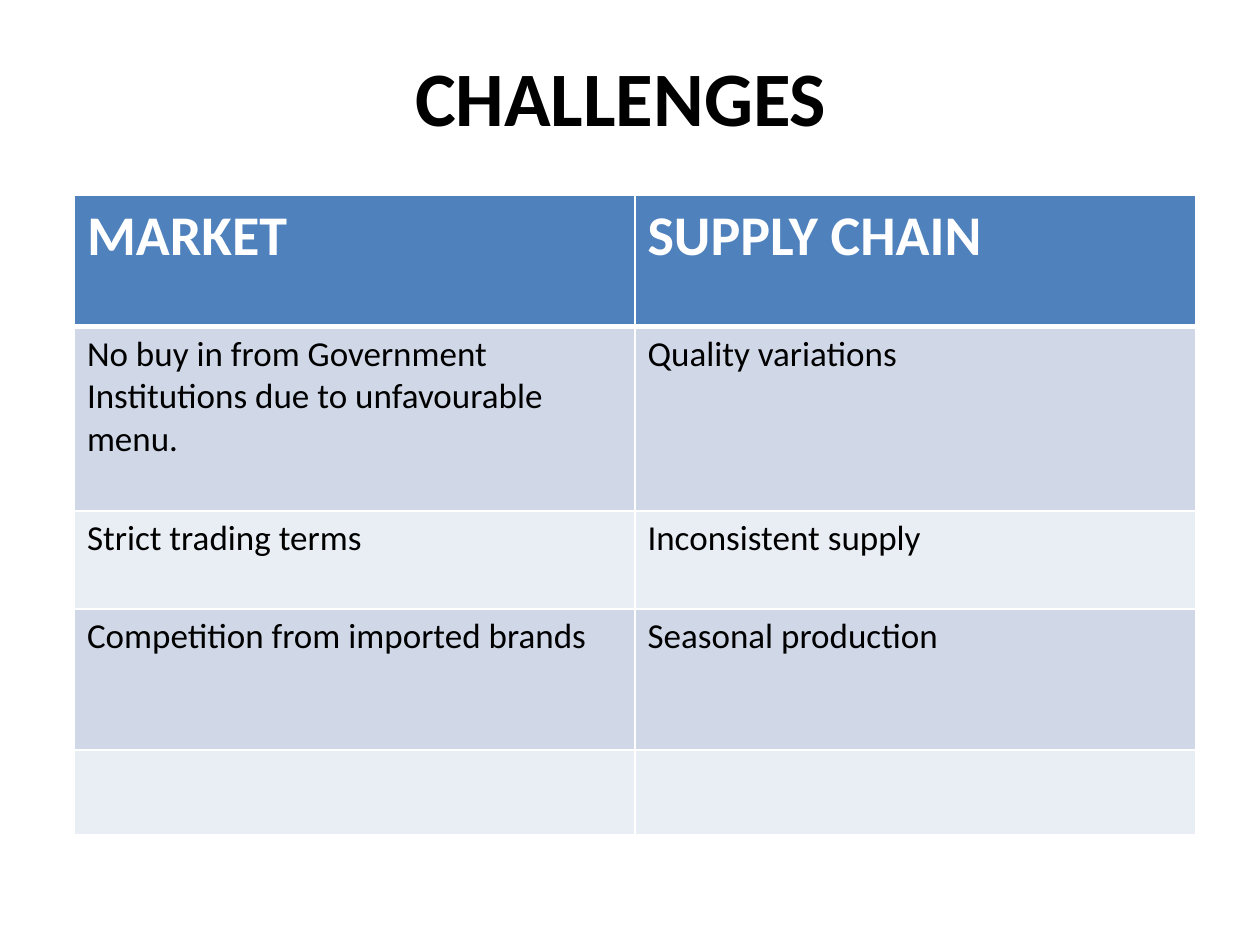
from lxml import etree
from pptx import Presentation
from pptx.dml.color import RGBColor
from pptx.enum.text import MSO_ANCHOR, PP_ALIGN
from pptx.oxml.ns import qn
from pptx.util import Cm, Pt

CENTER, LEFT = PP_ALIGN.CENTER, PP_ALIGN.LEFT
MIDDLE = MSO_ANCHOR.MIDDLE
TITLE_ONLY = 5
COLORS = {"text": "000000", "white": "FFFFFF", "header": "4F81BD",
          "band_dark": "D0D8E8", "band_light": "E9EDF4"}
TITLE_FONT = {"name": "Calibri", "size": Pt(44), "bold": True}
HEADER_FONT = {"name": "Calibri", "size": Pt(32), "bold": True}
BODY_FONT = {"name": "Calibri", "size": Pt(20), "bold": False}

CHALLENGES = [
    ("MARKET", "SUPPLY CHAIN"),
    ("No buy in from Government Institutions due to unfavourable menu.",
     "Quality variations"),
    ("Strict trading terms", "Inconsistent supply"),
    ("Competition from imported brands", "Seasonal production"),
    ("", ""),
]
ROW_HEIGHTS = [2.64, 3.72, 1.98, 2.84, 1.7]


def format_paragraph(paragraph, font_values, color, alignment):
    paragraph.alignment = alignment
    for attribute, value in font_values.items():
        setattr(paragraph.font, attribute, value)
    paragraph.font.color.rgb = RGBColor.from_string(COLORS[color])


def add_borders(cell, widths):
    """Draw white cell borders; widths maps each side to points."""
    properties = cell._tc.get_or_add_tcPr()
    for side, width in widths.items():
        line = etree.SubElement(properties, qn(f"a:ln{side}"), w=str(Pt(width)))
        fill = etree.SubElement(line, qn("a:solidFill"))
        etree.SubElement(fill, qn("a:srgbClr"), val=COLORS["white"])


def place_title(slide, text, left, top, width, height):
    title = slide.shapes.title
    title.left, title.top = Cm(left), Cm(top)
    title.width, title.height = Cm(width), Cm(height)
    frame = title.text_frame
    frame.text = text
    frame.vertical_anchor = MIDDLE
    format_paragraph(frame.paragraphs[0], TITLE_FONT, "text", CENTER)


def add_challenges_table(slide, left, top, width):
    table = slide.shapes.add_table(
        len(CHALLENGES), len(CHALLENGES[0]), Cm(left), Cm(top),
        Cm(width), Cm(sum(ROW_HEIGHTS))).table
    for column in table.columns:
        column.width = Cm(width / len(table.columns))

    for r, (challenges, height) in enumerate(zip(CHALLENGES, ROW_HEIGHTS)):
        table.rows[r].height = Cm(height)
        is_header = r == 0
        if is_header:
            fill, color, font_values = "header", "white", HEADER_FONT
        else:
            fill = "band_dark" if r % 2 else "band_light"
            color, font_values = "text", BODY_FONT
        # The heavy rule is shared by the header and the first body row
        borders = {"L": 1, "R": 1, "T": 3 if r == 1 else 1,
                   "B": 3 if is_header else 1}
        for c, challenge in enumerate(challenges):
            cell = table.cell(r, c)
            add_borders(cell, borders)
            cell.fill.solid()
            cell.fill.fore_color.rgb = RGBColor.from_string(COLORS[fill])
            if challenge:
                cell.text = challenge
                format_paragraph(cell.text_frame.paragraphs[0],
                                 font_values, color, LEFT)


def main():
    presentation = Presentation()
    presentation.slide_width, presentation.slide_height = Cm(25.4), Cm(19.05)
    slide = presentation.slides.add_slide(presentation.slide_layouts[TITLE_ONLY])
    place_title(slide, "CHALLENGES", 1.09, 0.33, 22.86, 3.18)
    add_challenges_table(slide, 1.5, 3.94, 22.6)
    presentation.save("out.pptx")


if __name__ == "__main__":
    main()
